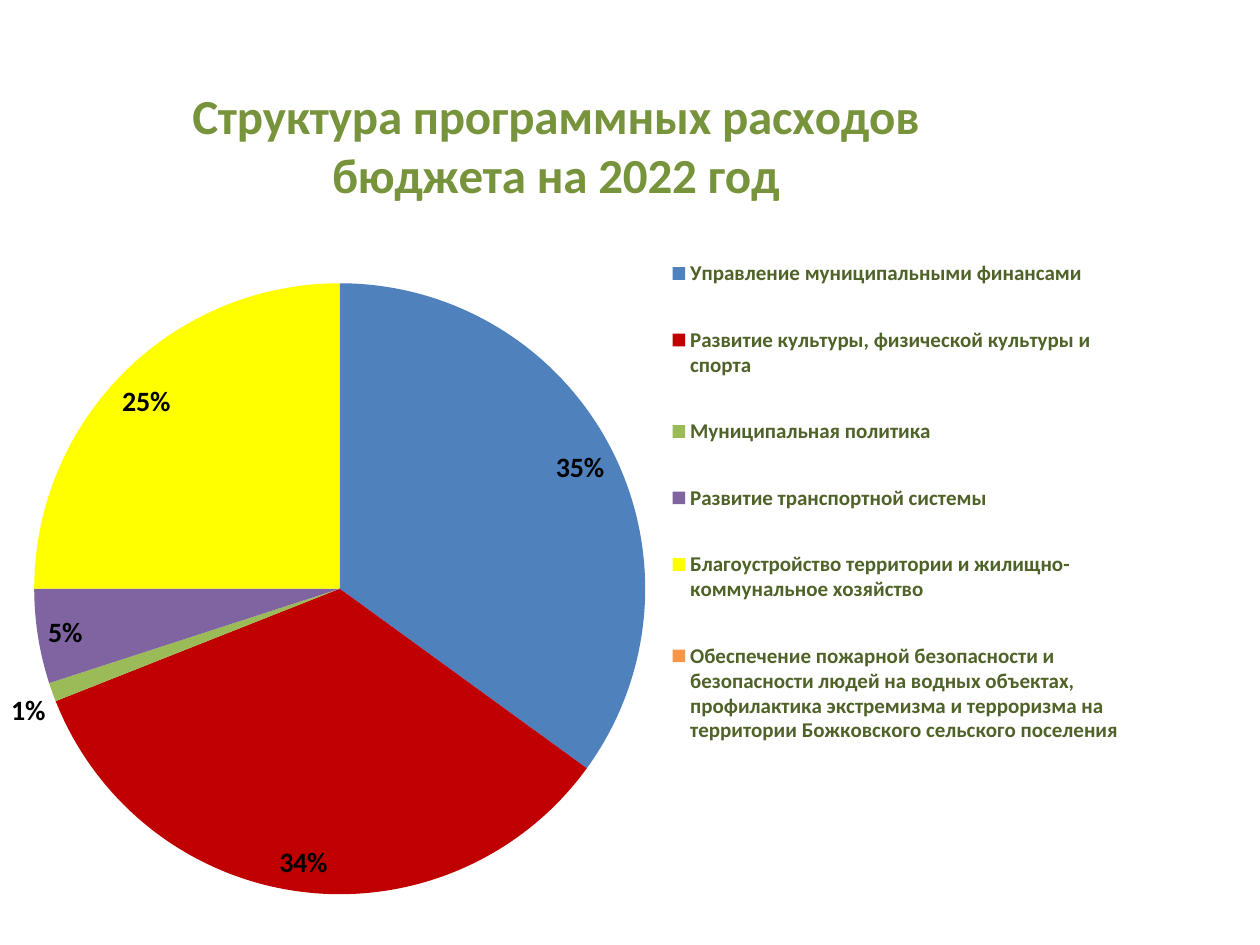
from lxml.etree import SubElement
from pptx import Presentation
from pptx.chart.data import CategoryChartData
from pptx.dml.color import RGBColor
from pptx.enum.chart import XL_CHART_TYPE, XL_LABEL_POSITION, XL_LEGEND_POSITION
from pptx.oxml.ns import qn
from pptx.util import Pt

PX = 914400 // 126
BLACK = RGBColor(0x00, 0x00, 0x00)
TITLE_GREEN = RGBColor(0x77, 0x93, 0x3C)
LEGEND_GREEN = RGBColor(0x4F, 0x62, 0x28)

TITLE = "Структура программных расходов бюджета на 2022 год"
PROGRAMS = [
    ("Управление муниципальными финансами", 35, RGBColor(0x4F, 0x81, 0xBD)),
    ("Развитие культуры, физической культуры и спорта", 34, RGBColor(0xC0, 0x00, 0x00)),
    ("Муниципальная политика", 1, RGBColor(0x9B, 0xBB, 0x59)),
    ("Развитие транспортной системы", 5, RGBColor(0x80, 0x64, 0xA2)),
    ("Благоустройство территории и жилищно-коммунальное хозяйство", 25,
     RGBColor(0xFF, 0xFF, 0x00)),
    ("Обеспечение пожарной безопасности и безопасности людей на водных объектах, "
     "профилактика экстремизма и терроризма на территории Божковского сельского поселения",
     0, RGBColor(0xF7, 0x96, 0x46)),
]


def set_manual_layout(parent, position, **settings):
    """Place a chart part by fractions of the chart; position is the index of c:layout."""
    layout = parent.find(qn("c:layout"))
    if layout is not None:
        parent.remove(layout)
    layout = parent.makeelement(qn("c:layout"), {})
    parent.insert(position, layout)
    manual = SubElement(layout, qn("c:manualLayout"))
    for name, value in settings.items():
        SubElement(manual, qn(f"c:{name}")).set("val", str(value))


def style_font(font, size, color, bold):
    font.name = "Calibri"
    font.size = Pt(size)
    font.bold = bold
    font.color.rgb = color


presentation = Presentation()
presentation.slide_width = 1260 * PX
presentation.slide_height = 945 * PX
slide = presentation.slides.add_slide(presentation.slide_layouts[6])

chart_data = CategoryChartData()
chart_data.categories = [name for name, _, _ in PROGRAMS]
chart_data.add_series(TITLE, [share for _, share, _ in PROGRAMS])
chart = slide.shapes.add_chart(
    XL_CHART_TYPE.PIE, -25 * PX, 28 * PX, 1158 * PX, 912 * PX, chart_data).chart
style_font(chart.font, 10, BLACK, False)

# Title
chart.has_title = True
title_frame = chart.chart_title.text_frame
title_frame.text = TITLE
style_font(title_frame.paragraphs[0].font, 28, TITLE_GREEN, True)
set_manual_layout(chart._chartSpace.chart.find(qn("c:title")), 1,
                  xMode="edge", yMode="edge", x=0.18, y=0.05)

# Pie slices and percentages
plot = chart.plots[0]
plot.vary_by_categories = True
for index, (_, _, color) in enumerate(PROGRAMS):
    fill = plot.series[0].points[index].format.fill
    fill.solid()
    fill.fore_color.rgb = color

plot.has_data_labels = True
labels = plot.data_labels
labels.show_value = False
labels.show_percentage = True
labels.number_format = "0%"
labels.number_format_is_linked = False
labels.position = XL_LABEL_POSITION.BEST_FIT
style_font(labels.font, 16, BLACK, True)
set_manual_layout(chart._chartSpace.chart.plotArea, 0, layoutTarget="inner",
                  xMode="edge", yMode="edge", x=0.05, y=0.28, w=0.53, h=0.67)

# Legend
chart.has_legend = True
legend = chart.legend
legend.position = XL_LEGEND_POSITION.RIGHT
legend.include_in_layout = False
style_font(legend.font, 12, LEGEND_GREEN, True)
set_manual_layout(chart._chartSpace.chart.find(qn("c:legend")), 1,
                  xMode="edge", yMode="edge", x=0.6, y=0.21, w=0.39, h=0.62)

presentation.save("out.pptx")
